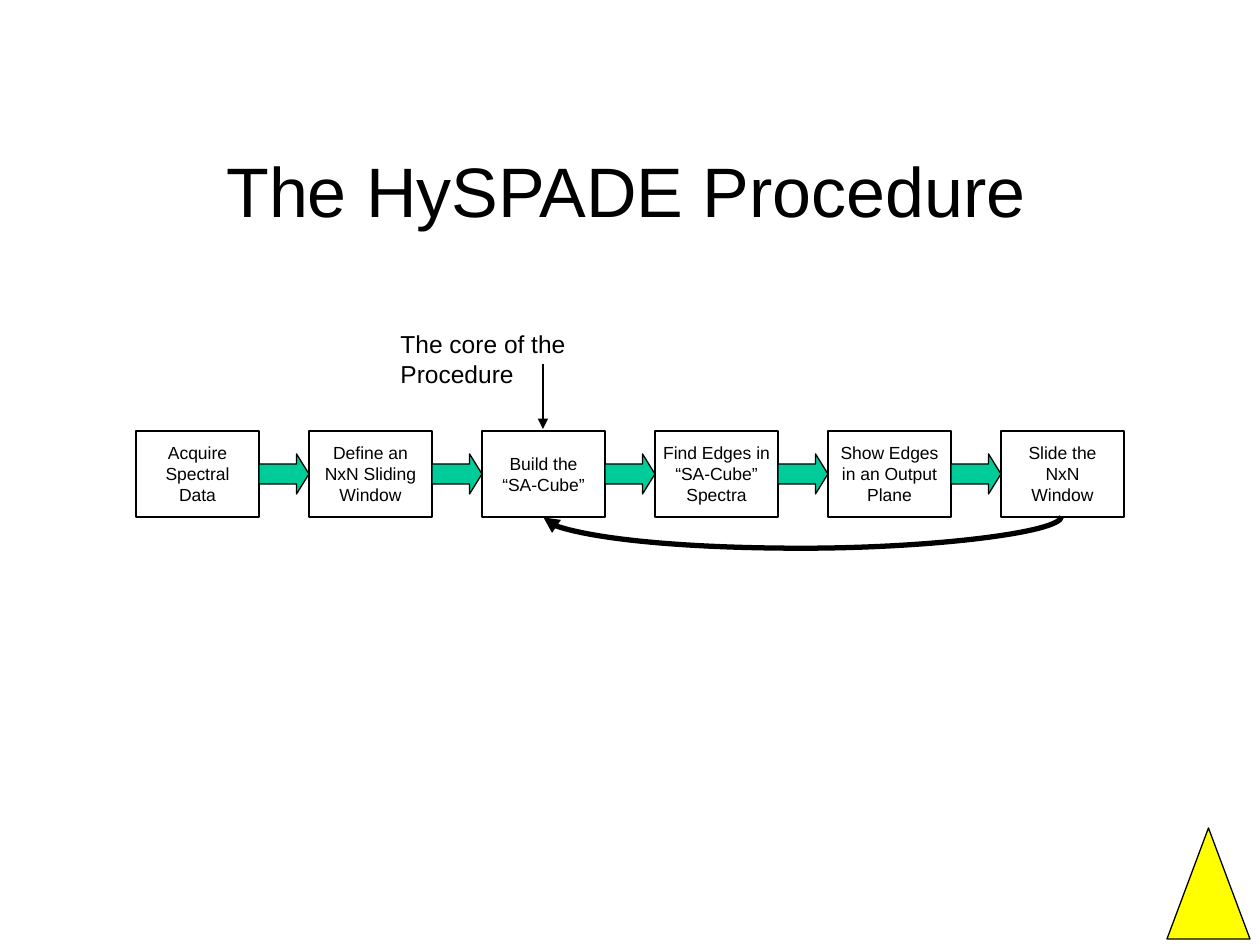
import pptx
import pptx.dml.color
import pptx.enum.shapes
import pptx.enum.text
import pptx.oxml
import pptx.oxml.ns
import pptx.util

PX = 914400 / 126
FONT = "Arial"
BLACK = pptx.dml.color.RGBColor(0x00, 0x00, 0x00)
GREEN = pptx.dml.color.RGBColor(0x00, 0xCC, 0x99)
YELLOW = pptx.dml.color.RGBColor(0xFF, 0xFF, 0x00)

SHAPE = pptx.enum.shapes.MSO_SHAPE
CONNECTOR = pptx.enum.shapes.MSO_CONNECTOR
ALIGN = pptx.enum.text.PP_ALIGN
ANCHOR = pptx.enum.text.MSO_ANCHOR

STEPS = [
    ["Acquire", "Spectral", "Data"],
    ["Define an", "NxN Sliding", "Window"],
    ["Build the", "“SA-Cube”"],
    ["Find Edges in", "“SA-Cube”", "Spectra"],
    ["Show Edges", "in an Output", "Plane"],
    ["Slide the", "NxN", "Window"],
]
CORE_STEP = 2
STEP_LEFT, STEP_TOP, STEP_WIDTH, STEP_HEIGHT = 136, 431, 123, 86
STEP_PITCH = 173
ARROW_HEIGHT = 40
LOOP_DEPTH = 32


def px(*lengths):
    return [pptx.util.Emu(round(length * PX)) for length in lengths]


def write_lines(frame, lines, size, align):
    frame.text = "\n".join(lines)
    for paragraph in frame.paragraphs:
        paragraph.alignment = align
        paragraph.font.name = FONT
        paragraph.font.size = pptx.util.Pt(size)
        paragraph.font.color.rgb = BLACK


def add_label(slide, box, text, size, wrap):
    frame = slide.shapes.add_textbox(*px(*box)).text_frame
    frame.word_wrap = wrap
    write_lines(frame, [text], size, ALIGN.LEFT)


def add_outlined(slide, kind, box, fill=None):
    shape = slide.shapes.add_shape(kind, *px(*box))
    shape.shadow.inherit = False
    if fill is None:
        shape.fill.background()
    else:
        shape.fill.solid()
        shape.fill.fore_color.rgb = fill
    shape.line.color.rgb = BLACK
    shape.line.width = pptx.util.Pt(0.75)
    return shape


def add_step(slide, left, lines):
    step = add_outlined(slide, SHAPE.RECTANGLE, (left, STEP_TOP, STEP_WIDTH, STEP_HEIGHT))
    frame = step.text_frame
    frame.margin_left = frame.margin_right = 0
    frame.word_wrap = False
    frame.vertical_anchor = ANCHOR.MIDDLE
    write_lines(frame, lines, 10, ALIGN.CENTER)


def add_flow_arrow(slide, left):
    top = STEP_TOP + (STEP_HEIGHT - ARROW_HEIGHT) // 2
    box = (left, top, STEP_PITCH - STEP_WIDTH, ARROW_HEIGHT)
    arrow = add_outlined(slide, SHAPE.RIGHT_ARROW, box, GREEN)
    arrow.adjustments[0] = 0.5
    arrow.adjustments[1] = 0.31


def add_pointer(slide, kind, ends, width):
    """Add a black connector with an arrowhead at its end."""
    pointer = slide.shapes.add_connector(kind, *px(*ends))
    pointer.line.color.rgb = BLACK
    pointer.line.width = pptx.util.Pt(width)
    line = pointer.line._get_or_add_ln()
    pptx.oxml.ns.qn("a:tailEnd")
    line.append(pptx.oxml.parse_xml(
        f'<a:tailEnd {pptx.oxml.ns.nsdecls("a")} type="triangle"/>'))
    pointer._element.spPr.append(pptx.oxml.parse_xml(
        f'<a:effectLst {pptx.oxml.ns.nsdecls("a")}/>'))
    return pointer


def add_loop(slide, start_x, end_x, y):
    """Curve below the steps: a one-pixel-wide connector turned by 90 degrees."""
    middle, half = (start_x + end_x) // 2, (start_x - end_x) // 2
    ends = (middle, y - half, middle + 1, y + half)
    properties = add_pointer(slide, CONNECTOR.CURVE, ends, 3)._element.spPr
    properties.find(pptx.oxml.ns.qn("a:xfrm")).set("rot", str(90 * 60000))
    geometry = properties.find(pptx.oxml.ns.qn("a:prstGeom"))
    for old in list(geometry):
        geometry.remove(old)
    geometry.append(pptx.oxml.parse_xml(
        f'<a:avLst {pptx.oxml.ns.nsdecls("a")}>'
        f'<a:gd name="adj1" fmla="val {LOOP_DEPTH * 100000}"/></a:avLst>'))


def main():
    deck = pptx.Presentation()
    deck.slide_width, deck.slide_height = px(1260, 945)
    slide = deck.slides.add_slide(deck.slide_layouts[6])

    add_outlined(slide, SHAPE.ISOSCELES_TRIANGLE, (1167, 828, 83, 111), YELLOW)
    add_label(slide, (214, 141, 830, 97), "The HySPADE Procedure", 40, False)

    lefts = [STEP_LEFT + i * STEP_PITCH for i in range(len(STEPS))]
    for left, lines in zip(lefts, STEPS):
        add_step(slide, left, lines)
    for left in lefts[:-1]:
        add_flow_arrow(slide, left + STEP_WIDTH)

    core_x, last_x = [lefts[i] + STEP_WIDTH // 2 for i in (CORE_STEP, -1)]
    add_loop(slide, last_x, core_x, STEP_TOP + STEP_HEIGHT)
    add_label(slide, (388, 323, 308, 41), "The core of the Procedure", 14, True)
    add_pointer(slide, CONNECTOR.STRAIGHT, (core_x, 364, core_x, STEP_TOP - 2), 0.75)

    deck.save("out.pptx")


if __name__ == "__main__":
    main()
